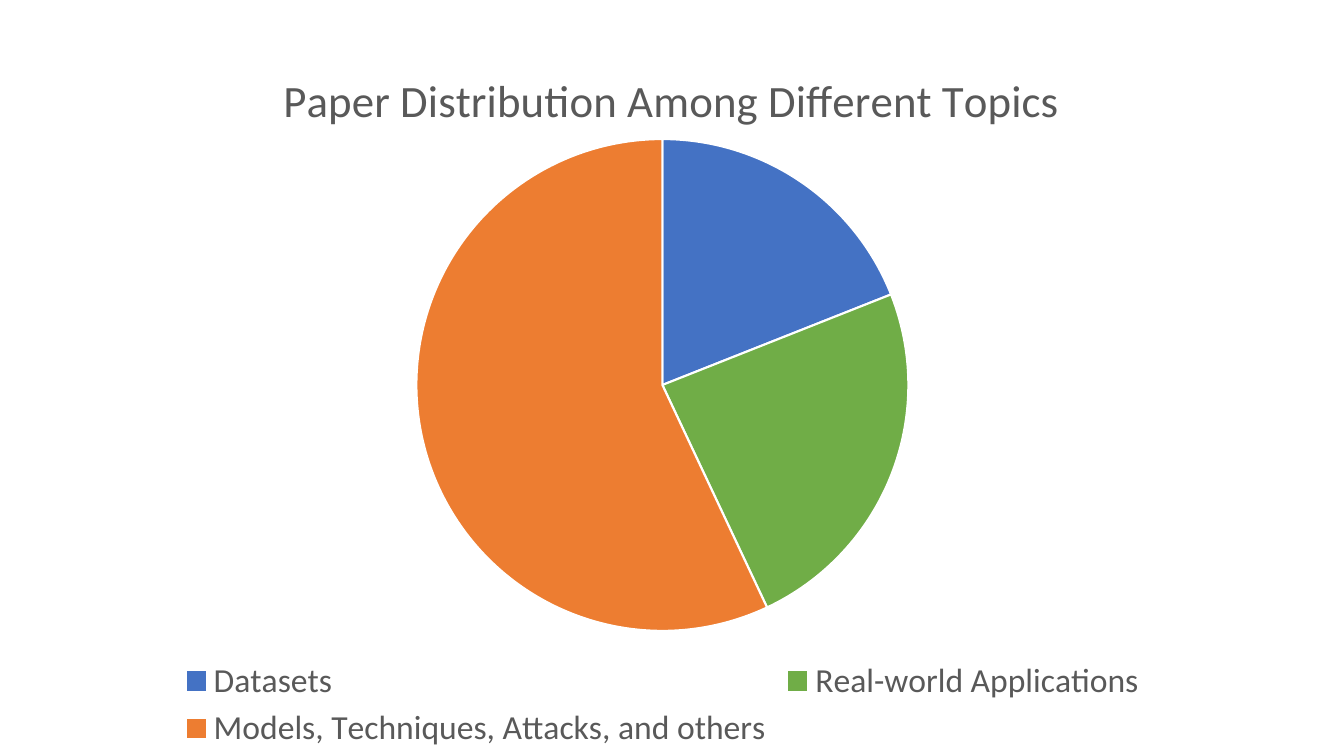
from lxml import etree
from pptx import Presentation
from pptx.chart.data import CategoryChartData
from pptx.dml.color import RGBColor
from pptx.enum.chart import XL_CHART_TYPE, XL_LEGEND_POSITION
from pptx.oxml.ns import qn
from pptx.util import Inches, Pt

PIE = XL_CHART_TYPE.PIE
LEGEND_BOTTOM = XL_LEGEND_POSITION.BOTTOM

TITLE = "Paper Distribution Among Different Topics"
TOPICS = [
    ("Datasets", 19, "4472C4"),
    ("Real-world Applications", 24, "70AD47"),
    ("Models, Techniques, Attacks, and others", 57, "ED7D31"),
]
THEME = {
    "font": "Calibri",
    "text": "595959",
    "separator": "FFFFFF",
    "title_size": 32,
    "legend_size": 24,
    "separator_width": 1.5,
}

SLIDE_SIZE = (13.33, 7.5)
CHART_BOX = (0.1, 0.22, 12.94, 7.28)
TITLE_CORNER = (2.73, 0.6)
PIE_CORNER = (4.13, 1.38)
PIE_DIAMETER = 4.88


def style_font(font, size):
    formats = {"name": THEME["font"], "size": Pt(size), "bold": False}
    for attribute, value in formats.items():
        setattr(font, attribute, value)
    font.color.rgb = RGBColor.from_string(THEME["text"])


def place_in_chart(part, index, corner, size=None):
    """Give a chart part a fixed place, from slide inches to chart fractions."""
    left, top, width, height = CHART_BOX
    layout = part.find(qn("c:layout"))
    if layout is None:
        layout = etree.Element(qn("c:layout"))
        part.insert(index, layout)
    manual = etree.SubElement(layout, qn("c:manualLayout"))
    settings = [("xMode", "edge"), ("yMode", "edge"),
                ("x", (corner[0] - left) / width),
                ("y", (corner[1] - top) / height)]
    if size:
        settings.insert(0, ("layoutTarget", "inner"))
        settings += [("w", size / width), ("h", size / height)]
    for tag, value in settings:
        etree.SubElement(manual, qn(f"c:{tag}")).set("val", str(value))


def add_topic_chart(slide):
    names, shares, colors = zip(*TOPICS)
    data = CategoryChartData()
    data.categories = names
    data.add_series("Series 1", shares)
    chart = slide.shapes.add_chart(PIE, *map(Inches, CHART_BOX), data).chart
    chart.font.name = THEME["font"]

    chart.has_title = True
    title = chart.chart_title
    title.include_in_layout = False
    title.text_frame.text = TITLE
    style_font(title.text_frame.paragraphs[0].runs[0].font, THEME["title_size"])

    chart.has_legend = True
    chart.legend.position = LEGEND_BOTTOM
    chart.legend.include_in_layout = False
    style_font(chart.legend.font, THEME["legend_size"])

    plot = chart.plots[0]
    plot.vary_by_categories = True
    for number, color in enumerate(colors):
        slice_format = plot.series[0].points[number].format
        slice_format.fill.solid()
        slice_format.fill.fore_color.rgb = RGBColor.from_string(color)
        slice_format.line.color.rgb = RGBColor.from_string(THEME["separator"])
        slice_format.line.width = Pt(THEME["separator_width"])

    chart_root = chart.element.find(qn("c:chart"))
    place_in_chart(chart_root.find(qn("c:title")), 1, TITLE_CORNER)
    place_in_chart(chart_root.find(qn("c:plotArea")), 0, PIE_CORNER, PIE_DIAMETER)


def main():
    presentation = Presentation()
    presentation.slide_width, presentation.slide_height = map(Inches, SLIDE_SIZE)
    blank_layout = presentation.slide_layouts[6]
    add_topic_chart(presentation.slides.add_slide(blank_layout))
    presentation.save("out.pptx")


if __name__ == "__main__":
    main()
